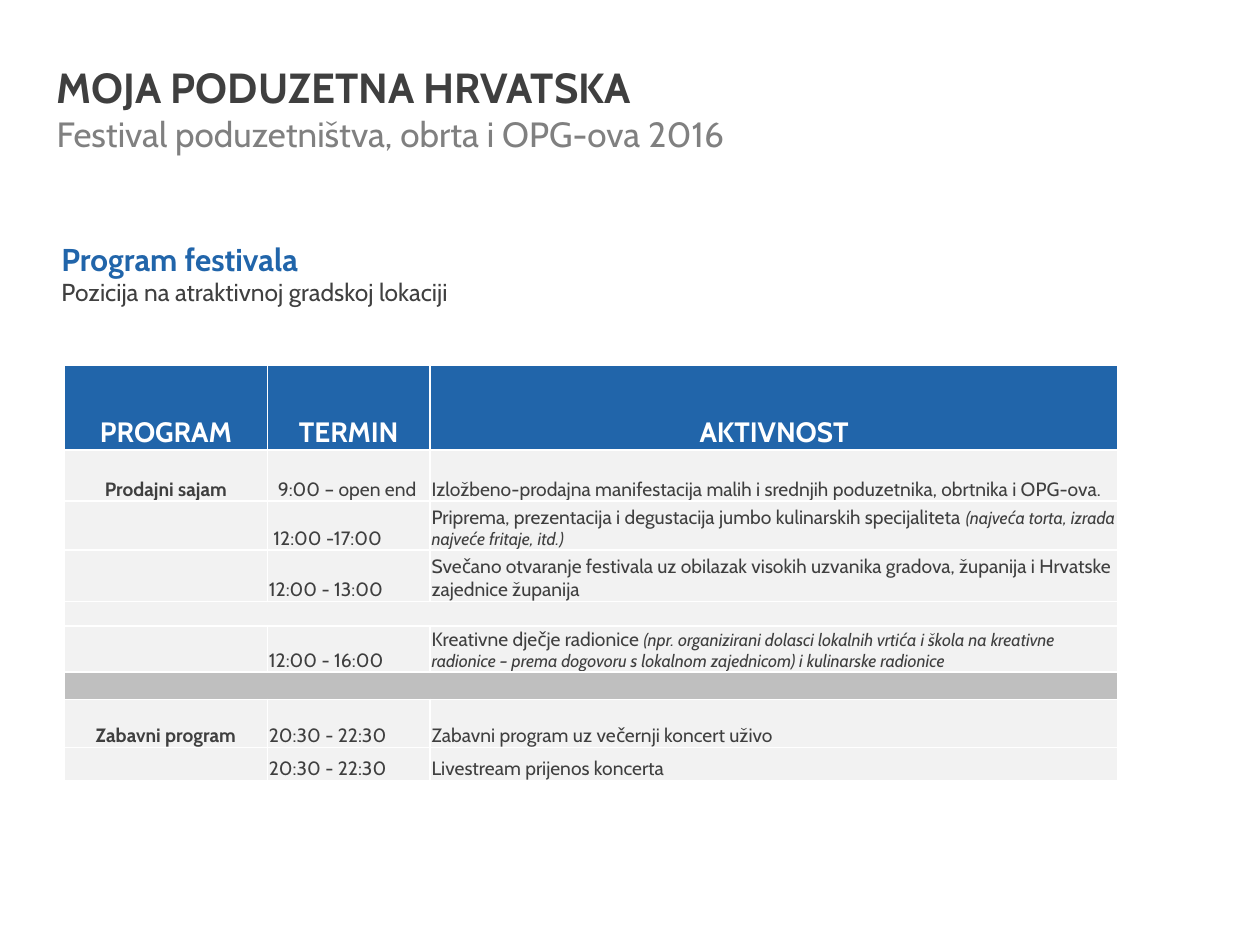
from lxml import etree
from pptx import Presentation
from pptx.dml.color import RGBColor
from pptx.enum.text import MSO_ANCHOR, MSO_AUTO_SIZE, PP_ALIGN
from pptx.oxml.ns import qn
from pptx.util import Cm, Pt

LEFT, CENTER = PP_ALIGN.LEFT, PP_ALIGN.CENTER
TOP, BOTTOM = MSO_ANCHOR.TOP, MSO_ANCHOR.BOTTOM
NO_AUTOFIT = MSO_AUTO_SIZE.NONE

FONT = "Cabin"
BLUE = RGBColor(0x21, 0x65, 0xAA)
DARK = RGBColor(0x3F, 0x3F, 0x3F)
BODY_GRAY = RGBColor(0x40, 0x40, 0x40)
MID_GRAY = RGBColor(0x80, 0x80, 0x80)
BAND_GRAY = RGBColor(0xBF, 0xBF, 0xBF)
LIGHT = RGBColor(0xF2, 0xF2, 0xF2)
WHITE = RGBColor(0xFF, 0xFF, 0xFF)

COLUMN_WIDTHS = (4.09, 3.28, 13.87)
ROW_HEIGHTS = (1.7, 1.03, 0.99, 1.04, 0.49, 0.93, 0.55, 0.97, 0.66)
HEADERS = ("PROGRAM", "TERMIN", "AKTIVNOST")
# Program, time, time indent in cm, activity, activity detail in italics
SCHEDULE = {
    1: ("Prodajni sajam", "9:00 – open end", 0.18,
        "Izložbeno-prodajna manifestacija malih i srednjih poduzetnika, "
        "obrtnika i OPG-ova.", ""),
    2: ("", "12:00 -17:00", 0.09,
        "Priprema, prezentacija i degustacija jumbo kulinarskih specijaliteta ",
        "(najveća torta, izrada najveće fritaje, itd.)"),
    3: ("", "12:00 - 13:00", 0,
        "Svečano otvaranje festivala uz obilazak visokih uzvanika gradova, "
        "županija i Hrvatske zajednice županija", ""),
    5: ("", "12:00 - 16:00", 0, "Kreativne dječje radionice ",
        "(npr. organizirani dolasci lokalnih vrtića i škola na kreativne "
        "radionice – prema dogovoru s lokalnom zajednicom) i kulinarske radionice"),
    7: ("Zabavni program", "20:30 - 22:30", 0,
        "Zabavni program uz večernji koncert uživo", ""),
    8: ("", "20:30 - 22:30", 0, "Livestream prijenos koncerta", ""),
}
BANDS = {4: LIGHT, 6: BAND_GRAY}


def add_span(para, text, size=11, color=DARK, bold=False, italic=False, align=LEFT):
    para.alignment = align
    span = para.add_run()
    span.text = text
    font = span.font
    font.name, font.size = FONT, Pt(size)
    font.bold, font.italic = bold, italic
    font.color.rgb = color


def add_label(page, text, left, top, width, height, **style):
    box = page.shapes.add_textbox(Cm(left), Cm(top), Cm(width), Cm(height))
    box.text_frame.word_wrap = True
    add_span(box.text_frame.paragraphs[0], text, **style)


def fill_title(title):
    title.left, title.top = Cm(0.89), Cm(1.12)
    title.width, title.height = Cm(19.2), Cm(2.13)
    frame = title.text_frame
    frame.word_wrap = True
    frame.auto_size = NO_AUTOFIT
    frame.vertical_anchor = TOP
    add_span(frame.paragraphs[0], "MOJA PODUZETNA HRVATSKA", size=24, bold=True)
    add_span(frame.add_paragraph(), "Festival poduzetništva, obrta i OPG-ova 2016",
             size=20, color=MID_GRAY)


def add_borders(cell):
    properties = cell._tc.get_or_add_tcPr()
    for position, side in enumerate(("lnL", "lnR", "lnT", "lnB")):
        line = etree.Element(qn(f"a:{side}"), w=str(Pt(1)))
        fill = etree.SubElement(line, qn("a:solidFill"))
        etree.SubElement(fill, qn("a:srgbClr"), val=str(WHITE))
        properties.insert(position, line)


def format_cell(cell, color):
    cell.fill.solid()
    cell.fill.fore_color.rgb = color
    cell.vertical_anchor = BOTTOM
    cell.margin_left = cell.margin_right = cell.margin_top = Cm(0.03)
    cell.margin_bottom = 0
    add_borders(cell)
    # A small end mark keeps empty rows from growing
    etree.SubElement(cell.text_frame.paragraphs[0]._p, qn("a:endParaRPr"), sz="800")


def write_cell(cell, text, indent=0, **style):
    if text:
        cell.margin_left = Cm(0.03 + indent)
        add_span(cell.text_frame.paragraphs[0], text, **style)


def add_schedule(page):
    table = page.shapes.add_table(
        len(ROW_HEIGHTS), len(COLUMN_WIDTHS), Cm(1.3), Cm(7.37),
        Cm(sum(COLUMN_WIDTHS)), Cm(sum(ROW_HEIGHTS))).table
    for column, width in zip(table.columns, COLUMN_WIDTHS):
        column.width = Cm(width)
    for index, (row, height) in enumerate(zip(table.rows, ROW_HEIGHTS)):
        row.height = Cm(height)
        color = BLUE if index == 0 else BANDS.get(index, LIGHT)
        for cell in row.cells:
            format_cell(cell, color)

    # Header row
    for column, text in enumerate(HEADERS):
        write_cell(table.cell(0, column), text, size=16, color=WHITE,
                   bold=True, align=CENTER)
    # Separator bands
    for index in BANDS:
        table.cell(index, 0).merge(table.cell(index, 2))
    # Events
    for index, (program, time, indent, activity, detail) in SCHEDULE.items():
        write_cell(table.cell(index, 0), program, bold=True, align=CENTER)
        write_cell(table.cell(index, 1), time, indent=indent)
        write_cell(table.cell(index, 2), activity)
        write_cell(table.cell(index, 2), detail, size=10, italic=True)


def main():
    deck = Presentation()
    deck.slide_width, deck.slide_height = Cm(25.4), Cm(19.05)
    page = deck.slides.add_slide(deck.slide_layouts[5])

    add_label(page, "Pozicija na atraktivnoj gradskoj lokaciji",
              0.99, 5.46, 19.63, 0.86, size=14, color=BODY_GRAY)
    add_schedule(page)
    add_label(page, "Program festivala", 0.99, 4.72, 22.5, 1.02,
              size=18, color=BLUE, bold=True)
    fill_title(page.shapes.title)

    deck.save("out.pptx")


if __name__ == "__main__":
    main()
